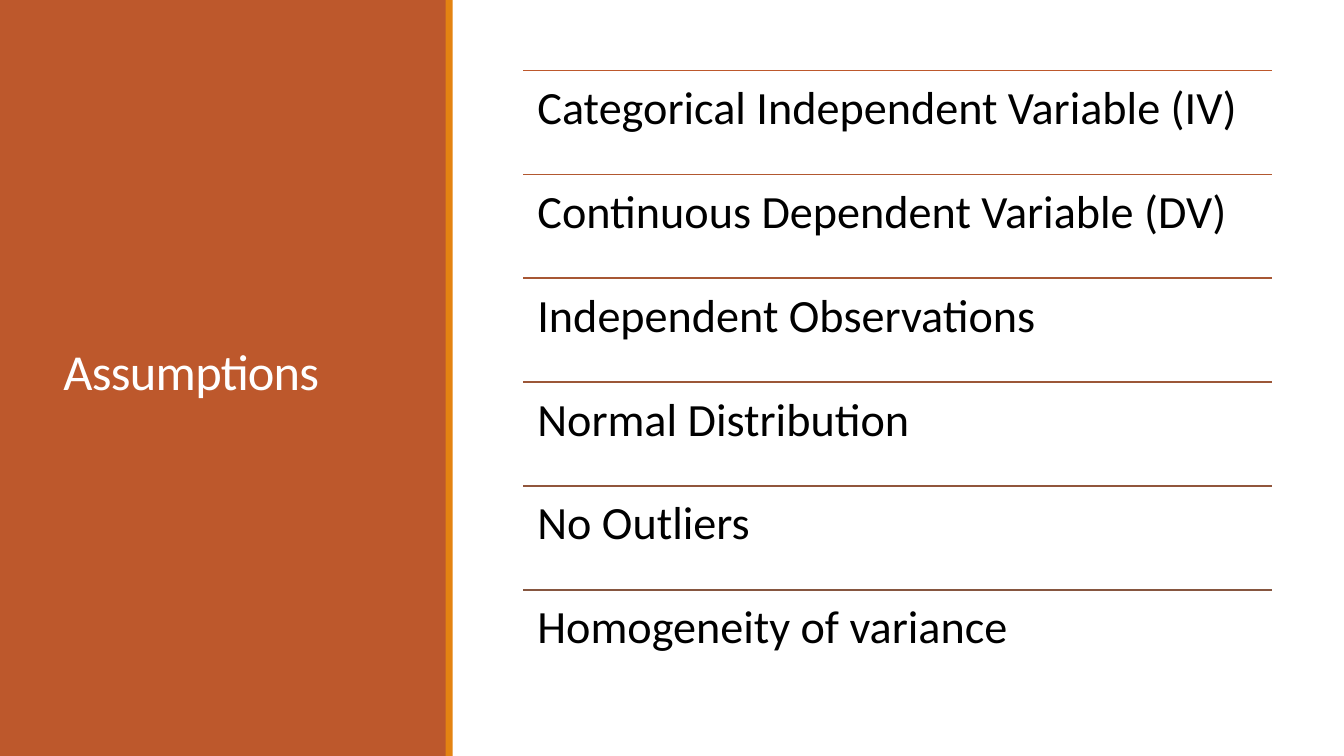
from dataclasses import dataclass

from lxml.etree import SubElement
from pptx import Presentation
from pptx.dml.color import RGBColor
from pptx.enum.shapes import MSO_CONNECTOR as Connector, MSO_SHAPE as Shape
from pptx.enum.text import MSO_ANCHOR as Anchor
from pptx.oxml.ns import qn
from pptx.util import Inches, Pt


@dataclass(frozen=True)
class Theme:
    font: str = "Calibri"
    panel: tuple = (0xBD, 0x58, 0x2C)
    stripe: tuple = (0xE4, 0x83, 0x12)
    last_rule: tuple = (0x86, 0x56, 0x40)
    title_text: tuple = (255, 255, 255)
    item_text: tuple = (0, 0, 0)
    title_size: int = 36
    item_size: int = 33
    rule_width: float = 1.25


THEME = Theme()
WIDTH, HEIGHT = 13.33, 7.5
TITLE = "Assumptions"
ASSUMPTIONS = [
    "Categorical Independent Variable (IV)",
    "Continuous Dependent Variable (DV)",
    "Independent Observations",
    "Normal Distribution",
    "No Outliers",
    "Homogeneity of variance",
]


def apply(target, values):
    for name, value in values.items():
        setattr(target, name, value)


def add_block(slide, box, color):
    block = slide.shapes.add_shape(Shape.RECTANGLE, *map(Inches, box))
    block.shadow.inherit = False
    block.fill.solid()
    block.fill.fore_color.rgb = RGBColor(*color)
    block.line.fill.background()


def add_text(slide, box, text, size, color, inset, anchor, spacing):
    frame = slide.shapes.add_textbox(*map(Inches, box)).text_frame
    apply(frame, {
        "word_wrap": True,
        "vertical_anchor": anchor,
        "margin_left": Inches(inset[0]),
        "margin_right": Inches(inset[0]),
        "margin_top": Inches(inset[1]),
        "margin_bottom": Inches(inset[1]),
    })
    paragraph = frame.paragraphs[0]
    paragraph.line_spacing = spacing
    run = paragraph.add_run()
    run.text = text
    apply(run.font, {"name": THEME.font, "size": Pt(size)})
    run.font.color.rgb = RGBColor(*color)
    return run


def add_rule(slide, left, right, top, color):
    rule = slide.shapes.add_connector(
        Connector.STRAIGHT, *map(Inches, (left, top, right, top)))
    rule.line.width = Pt(THEME.rule_width)
    rule.line.color.rgb = RGBColor(*color)
    SubElement(rule._element.spPr, qn("a:effectLst"))


def title_panel(slide, box):
    left, top, width, height = box
    stripe_width = 0.07
    add_block(slide, box, THEME.panel)
    add_block(slide, (left + width - 0.01, top, stripe_width, height), THEME.stripe)
    # Title, centred vertically with slightly tightened letters
    title_box = (left + 0.12 * width, top + 0.076 * height,
                 0.76 * width, 0.84 * height)
    title = add_text(slide, title_box, TITLE, THEME.title_size,
                     THEME.title_text, (0.1, 0.05), Anchor.MIDDLE, 0.85)
    title._r.get_or_add_rPr().set("spc", "-50")


def assumption_list(slide, box):
    left, top, width, height = box
    row_height = height / len(ASSUMPTIONS)
    for row, assumption in enumerate(ASSUMPTIONS):
        row_top = top + row * row_height
        # Rule colours fade evenly from first row to last
        share = row / (len(ASSUMPTIONS) - 1)
        color = [round(first + (last - first) * share)
                 for first, last in zip(THEME.panel, THEME.last_rule)]
        add_rule(slide, left, left + width, row_top, color)
        add_text(slide, (left, row_top, width, row_height), assumption,
                 THEME.item_size, THEME.item_text, (0.14, 0.14),
                 Anchor.TOP, 0.9)


def main():
    deck = Presentation()
    apply(deck, {"slide_width": Inches(WIDTH), "slide_height": Inches(HEIGHT)})
    slide = deck.slides.add_slide(deck.slide_layouts[6])
    title_panel(slide, (0, 0, 4.43, HEIGHT))
    assumption_list(slide, (5.19, 0.7, 7.43, 6.18))
    deck.save("out.pptx")


if __name__ == "__main__":
    main()
